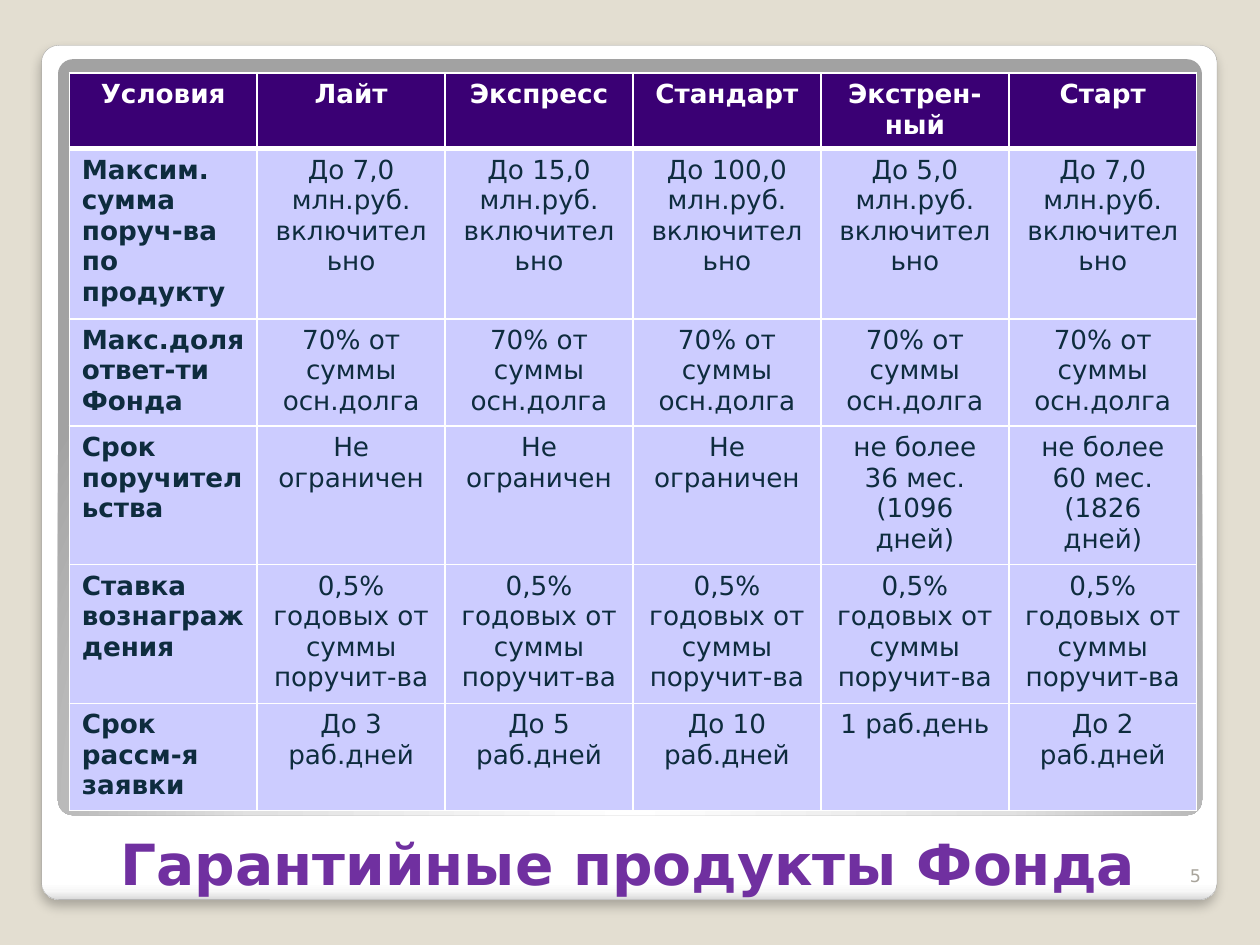
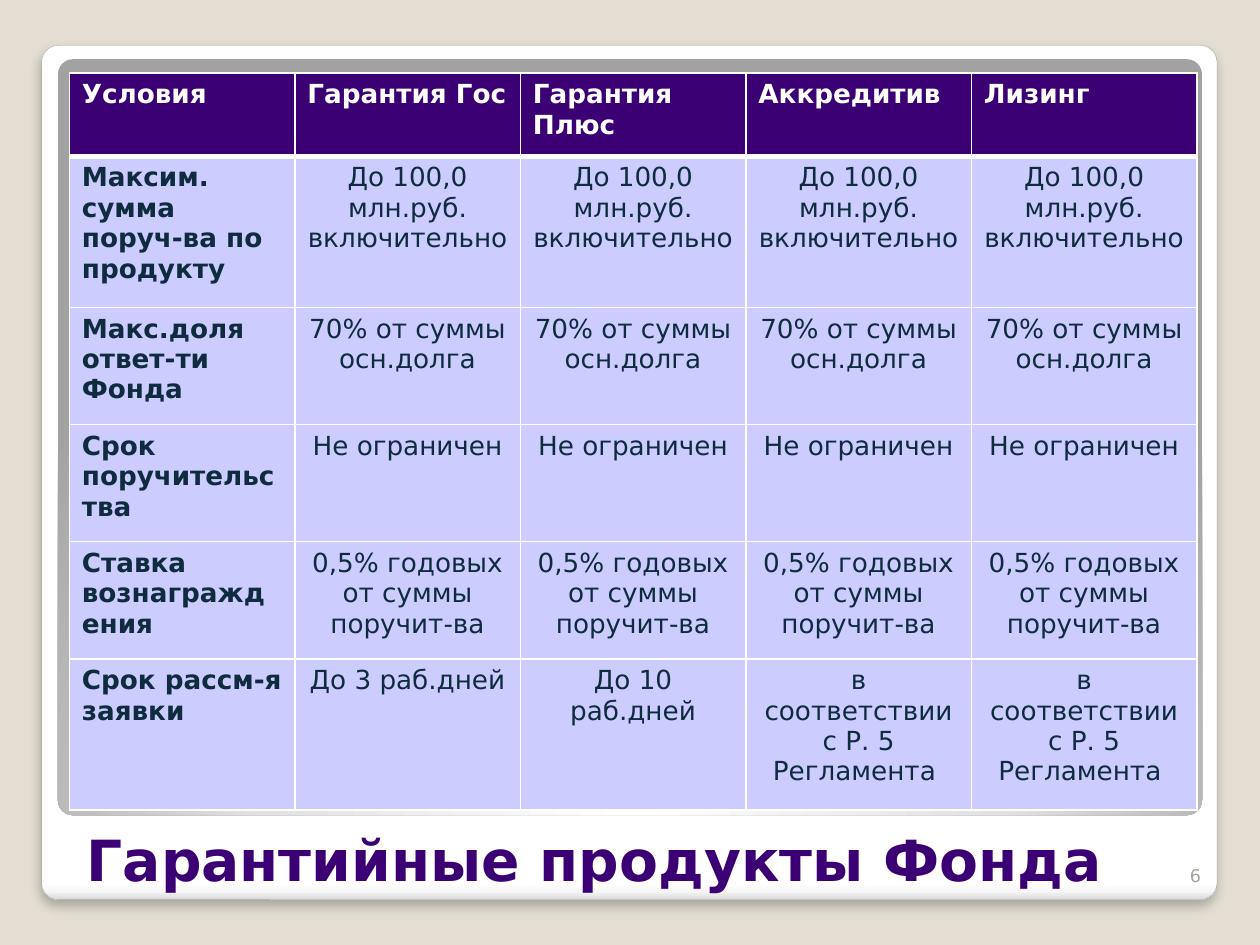
from dataclasses import dataclass
from lxml.etree import SubElement
from pptx import Presentation
from pptx.dml.color import RGBColor
from pptx.enum.shapes import MSO_SHAPE
from pptx.enum.text import MSO_ANCHOR, PP_ALIGN
from pptx.oxml.ns import qn
from pptx.util import Inches, Pt


@dataclass(frozen=True)
class Theme:
    font: str = "DejaVu Sans"
    back: str = "E3DED1"
    white: str = "FFFFFF"
    edge: str = "A4A4A4"
    shade: str = "000000"
    violet: str = "7030A0"
    indigo: str = "3A0074"
    lilac: str = "CCCCFF"
    ink: str = "0E2C3E"
    grey: str = "A8A49B"
    card: tuple = ((0, "FFFFFF"), (98, "FFFFFF"), (99, "F7F7F7"), (100, "DADADA"))
    panel: tuple = ((0, "FFFFFF"), (55, "E1E1E1"), (100, "A2A2A2"))
    big: float = 32.4
    body: float = 15
    small: float = 10
    thin: float = 1
    thick: float = 3


def unit(count):
    return Inches(count / 10)


def add(node, tag, **values):
    return SubElement(node, qn(tag), {key: str(val) for key, val in values.items()})


def tint(node, hue):
    return add(node, "a:srgbClr", val=hue)


class Deck:
    def __init__(self, theme):
        self.theme = theme
        self.deck = Presentation()
        self.deck.slide_width, self.deck.slide_height = unit(100), unit(75)
        self.slide = None

    def start(self):
        self.slide = self.deck.slides.add_slide(self.deck.slide_layouts[6])
        fill = self.slide.background.fill
        fill.solid()
        fill.fore_color.rgb = RGBColor.from_string(self.theme.back)
        card = self.frame((3.3, 3.6, 93.3, 67.8), self.theme.card)
        card.line.color.rgb = RGBColor.from_string(self.theme.edge)
        card.line.width = Pt(0.16)
        self.cast(card)
        self.frame((4.6, 4.7, 90.8, 60), self.theme.panel, True)

    def frame(self, box, stops, round_fill=False):
        shape = self.slide.shapes.add_shape(MSO_SHAPE.ROUNDED_RECTANGLE, *map(unit, box))
        shape.adjustments[0] = 0.02
        shape.shadow.inherit = False
        shape.line.fill.background()
        shape.fill.gradient()
        grad = shape.element.spPr.find(qn("a:gradFill"))
        for child in list(grad):
            grad.remove(child)
        chain = add(grad, "a:gsLst")
        for place, hue in stops:
            tint(add(chain, "a:gs", pos=place * 1000), hue)
        if round_fill:
            way = add(grad, "a:path", path="circle")
            add(way, "a:fillToRect", l=50000, t=175000, r=50000, b=-75000)
        else:
            add(grad, "a:lin", ang=5400000, scaled=0)
        return shape

    def cast(self, shape):
        effect = shape.element.spPr.find(qn("a:effectLst"))
        shadow = add(effect, "a:outerShdw", blurRad=Pt(6), dist=Pt(4),
                     dir=5400000, algn="t", rotWithShape=0)
        add(tint(shadow, self.theme.shade), "a:alpha", val=25000)

    def words(self, frame, text, size, hue, bold=False, align=PP_ALIGN.LEFT):
        frame.text = text
        for para in frame.paragraphs:
            para.alignment = align
            font = para.font
            font.name, font.size, font.bold = self.theme.font, Pt(size), bold
            font.color.rgb = RGBColor.from_string(hue)

    def label(self, box, text, size, hue, **style):
        frame = self.slide.shapes.add_textbox(*map(unit, box)).text_frame
        frame.word_wrap = True
        frame.vertical_anchor = MSO_ANCHOR.BOTTOM
        self.words(frame, text, size, hue, **style)
        return frame

    def title(self, box, text, hue, align):
        frame = self.label(box, text, self.theme.big, hue, bold=True, align=align)
        frame.margin_bottom = unit(0.2)

    def number(self, value):
        self.label((91.3, 66.8, 5, 4), str(value), self.theme.small,
                   self.theme.grey, align=PP_ALIGN.RIGHT)

    def border(self, cell, row):
        props = cell._tc.get_or_add_tcPr()
        for side in "LRTB":
            heavy = (row, side) in ((0, "B"), (1, "T"))
            width = self.theme.thick if heavy else self.theme.thin
            line = add(props, f"a:ln{side}", w=Pt(width))
            tint(add(line, "a:solidFill"), self.theme.white)

    def table(self, rows, heights, head_align):
        look = self.theme
        count, wide, tall = len(rows[0]), 89.5, 58.5
        shape = self.slide.shapes.add_table(
            len(rows), count, *map(unit, (5.5, 5.8, wide, tall)))
        grid = shape.table
        grid.horz_banding = False
        for col in grid.columns:
            col.width = unit(wide / count)
        for row, line in enumerate(rows):
            grid.rows[row].height = unit(heights[row])
            for col, text in enumerate(line):
                cell = grid.cell(row, col)
                self.border(cell, row)
                cell.fill.solid()
                head = row == 0
                cell.fill.fore_color.rgb = RGBColor.from_string(
                    look.indigo if head else look.lilac)
                align = head_align if head else PP_ALIGN.CENTER if col else PP_ALIGN.LEFT
                self.words(cell.text_frame, text, look.body,
                           look.white if head else look.ink, head or col == 0, align)
        shape.height = unit(tall)


HEADING = "Гарантийные продукты Фонда"
TERMS = ("Условия", "Максим.\nсумма поруч-ва по продукту", "Макс.доля ответ-ти Фонда",
         "Срок поручительства", "Ставка вознаграждения", "Срок рассм-я заявки")
SHARE = "70% от суммы осн.долга"
OPEN = "Не ограничен"
RATE = "0,5% годовых от суммы поручит-ва"
RULE = "в соответствии с Р. 5 Регламента "


def build_rows(items):
    cols = [(name, f"До {limit} млн.руб. включительно", SHARE, term, RATE, review)
            for name, limit, term, review in items]
    return list(zip(TERMS, *cols))


FIRST = build_rows((
    ("Лайт", "7,0", OPEN, "До 3 раб.дней"),
    ("Экспресс", "15,0", OPEN, "До 5 раб.дней"),
    ("Стандарт", "100,0", OPEN, "До 10 раб.дней"),
    ("Экстрен-ный", "5,0", "не более 36 мес. (1096 дней)", "1 раб.день"),
    ("Старт", "7,0", "не более 60 мес. (1826 дней)", "До 2 раб.дней"),
))
SECOND = build_rows((
    ("Гарантия Гос", "100,0", OPEN, "До 3 раб.дней"),
    ("Гарантия Плюс", "100,0", OPEN, "До 10 раб.дней"),
    ("Аккредитив", "100,0", OPEN, RULE),
    ("Лизинг", "100,0", OPEN, RULE),
))


def main():
    theme = Theme()
    deck = Deck(theme)
    pages = (
        (5, FIRST, [4.1] * 6, (5.1, 65.1, 89.5, 6.3), theme.violet, PP_ALIGN.CENTER),
        (6, SECOND, [6.6, 12, 9.3, 9.3, 9.3, 12], (5.9, 64.3, 89.5, 6.8),
         theme.indigo, PP_ALIGN.LEFT),
    )
    for number, rows, heights, box, hue, align in pages:
        deck.start()
        deck.title(box, HEADING, hue, align)
        deck.table(rows, heights, align)
        deck.number(number)
    deck.deck.save("out.pptx")


if __name__ == "__main__":
    main()
